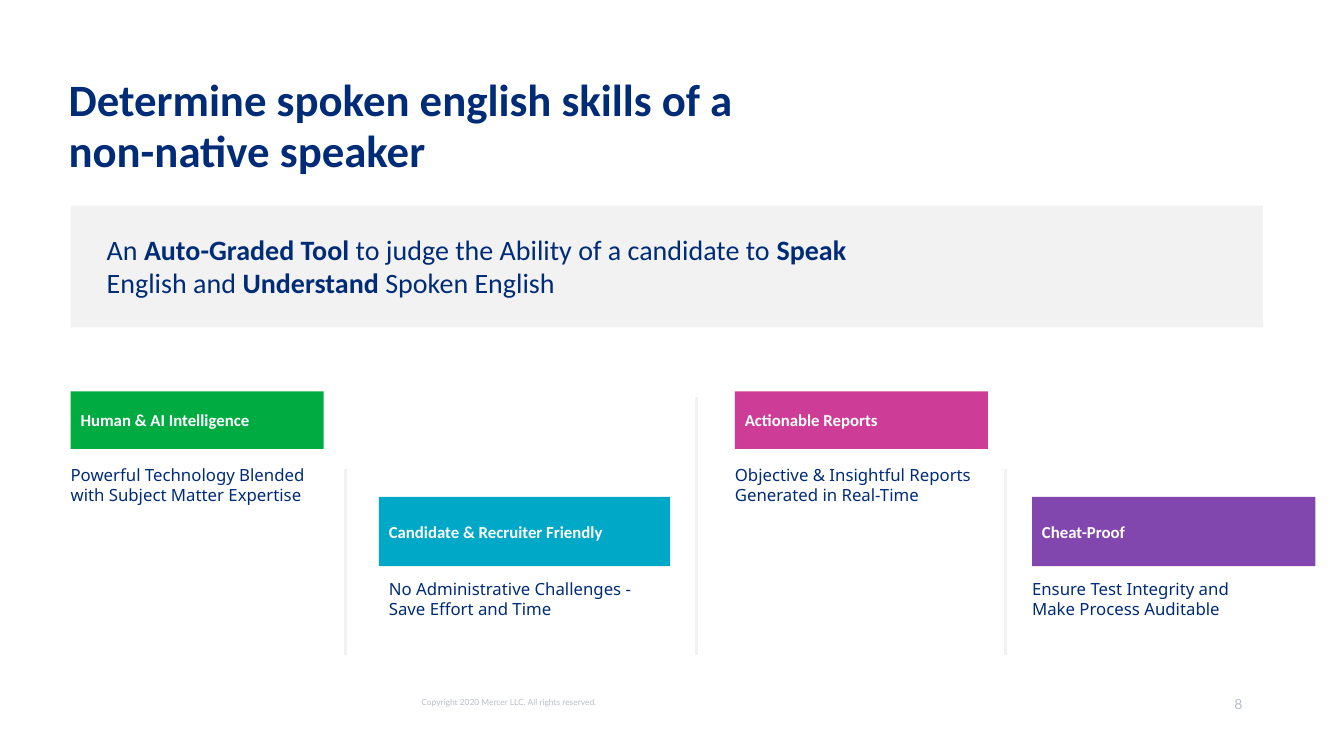
"""Builds the slide on testing the spoken English of non-native speakers."""
from lxml import etree
from pptx import Presentation
from pptx.dml.color import RGBColor
from pptx.enum.shapes import MSO_CONNECTOR, MSO_SHAPE
from pptx.enum.text import MSO_ANCHOR, PP_ALIGN
from pptx.oxml.ns import qn
from pptx.util import Cm, Pt

RECT = MSO_SHAPE.RECTANGLE
STRAIGHT = MSO_CONNECTOR.STRAIGHT
TOP, MIDDLE = MSO_ANCHOR.TOP, MSO_ANCHOR.MIDDLE
LEFT, RIGHT = PP_ALIGN.LEFT, PP_ALIGN.RIGHT


def rgb(value):
    return RGBColor.from_string(value)


class Deck:
    NAVY, PALE, MUTED, WHITE = "002C77", "F2F2F2", "B9BFC7", "FFFFFF"
    HEAD, BODY, SMALL = "Calibri", "Noto Sans", "Lato"

    def __init__(self):
        self.prs = Presentation()
        self.prs.slide_width, self.prs.slide_height = Cm(33.87), Cm(19.05)
        self.s = self.prs.slides.add_slide(self.prs.slide_layouts[6])

    def fill_text(self, sp, paragraphs, font, size, color, bold=None,
                  align=LEFT, anchor=TOP, inset=True, spacing=None):
        tf = sp.text_frame
        tf.word_wrap = True
        tf.vertical_anchor = anchor
        tf.margin_left = tf.margin_right = Cm(0.25 if inset else 0)
        tf.margin_top = tf.margin_bottom = Cm(0.13 if inset else 0)
        for i, runs in enumerate(paragraphs):
            p = tf.add_paragraph() if i else tf.paragraphs[0]
            p.alignment = align
            p.line_spacing = spacing
            p.font.name, p.font.size = font, Pt(size)
            p.font.color.rgb = rgb(color)
            p.font.bold = bold
            for text, strong in runs:
                r = p.add_run()
                r.text = text
                if strong:
                    r.font.bold = True

    def text(self, box, paragraphs, font, size, color, **style):
        sp = self.s.shapes.add_textbox(*map(Cm, box))
        self.fill_text(sp, paragraphs, font, size, color, **style)

    def rect(self, box, fill):
        sp = self.s.shapes.add_shape(RECT, *map(Cm, box))
        sp.shadow.inherit = False
        sp.fill.solid()
        sp.fill.fore_color.rgb = rgb(fill)
        sp.line.fill.background()
        return sp

    def tag(self, box, fill, label):
        self.fill_text(self.rect(box, fill), [[(label, False)]], self.HEAD, 12,
                       self.WHITE, bold=True, anchor=MIDDLE)

    def divider(self, x, top, bottom):
        line = self.s.shapes.add_connector(STRAIGHT, Cm(x), Cm(top), Cm(x), Cm(bottom))
        line.line.color.rgb = rgb(self.PALE)
        line.line.width = Pt(2.25)
        etree.SubElement(line._element.spPr, qn("a:effectLst"))


def main():
    d = Deck()
    d.text((1.73, 1.9, 18.57, 2.69),
           [[("Determine spoken english skills of a non-native speaker", False)]],
           d.HEAD, 32, d.NAVY, bold=True, inset=False, spacing=Pt(36))
    d.rect((1.78, 5.18, 30.05, 3.07), d.PALE)
    d.text((2.44, 5.72, 21.16, 1.96),
           [[("An ", False), ("Auto-Graded Tool", True),
             (" to judge the Ability of a candidate to ", False), ("Speak", True),
             (" English and ", False), ("Understand", True),
             (" Spoken English", False)]],
           d.HEAD, 20, d.NAVY)

    upper, lower = (9.86, 1.45, 11.58), (12.52, 1.75, 14.45)
    features = [
        (upper, 1.78, 6.38, "00AC41", "Human & AI Intelligence", 1.53, 7.34,
         ["Powerful Technology Blended with Subject Matter Expertise"]),
        (lower, 9.55, 7.34, "00A8C8", "Candidate & Recruiter Friendly", 9.55, 7.39,
         ["No Administrative Challenges - Save Effort and Time"]),
        (upper, 18.52, 6.38, "CD3C96", "Actionable Reports", 18.27, 8.6,
         ["Objective & Insightful Reports Generated in Real-Time"]),
        (lower, 26.01, 7.14, "8246AF", "Cheat-Proof", 25.76, 9.27,
         ["Ensure Test Integrity and", "Make Process Auditable"]),
    ]
    for (y, height, note_y), x, width, fill, label, note_x, note_width, notes in features:
        d.tag((x, y, width, height), fill, label)
        d.text((note_x, note_y, note_width, 1.27), [[(note, False)] for note in notes],
               d.BODY, 12, d.NAVY)

    for x, top in ((8.71, 11.81), (17.55, 10.01), (25.35, 11.81)):
        d.divider(x, top, 16.51)

    d.text((10.62, 17.6, 4.78, 0.36),
           [[("Copyright 2020 Mercer LLC. All rights reserved.", False)]],
           d.SMALL, 6, d.MUTED, inset=False, spacing=0.9)
    d.text((30.4, 17.53, 0.91, 0.43), [[("8", False)]],
           d.SMALL, 10, d.MUTED, align=RIGHT, inset=False)
    d.prs.save("out.pptx")


if __name__ == "__main__":
    main()
